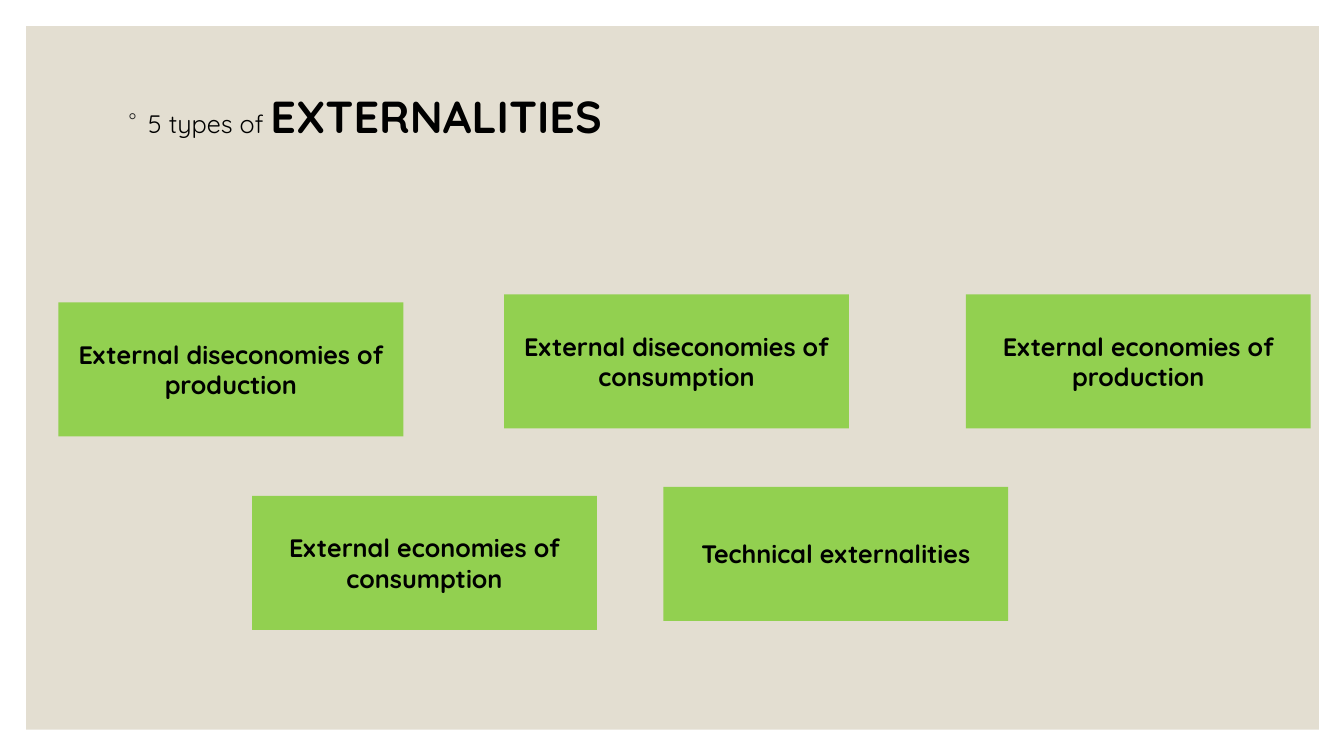
"""Builds a slide that names the five types of externalities."""
from lxml import etree
from pptx import Presentation
from pptx import util as u
from pptx.dml import color
from pptx.enum import shapes, text
from pptx.oxml import ns

FONT = "Quicksand"
BLACK, BULLET, PANEL, GREEN = "000000", "262626", "E3DED1", "92D050"
CARD_WIDTH, CARD_HEIGHT = 3.42, 1.33
CARDS = [
    ("External diseconomies of production", 0.58, 3),
    ("Technical externalities", 6.58, 4.83),
    ("External economies of consumption", 2.5, 4.92),
    ("External diseconomies of consumption", 5, 2.92),
    ("External economies of production", 9.58, 2.92),
]


def rgb(value):
    """Return the colour for a hex string."""
    return color.RGBColor.from_string(value)


def set_format(target, values):
    """Set each attribute named in values on target."""
    for name, value in values.items():
        setattr(target, name, value)


def place(shape, left, top, width, height):
    """Move and size a shape in inches."""
    edges = dict(left=left, top=top, width=width, height=height)
    set_format(shape, {name: u.Inches(edge) for name, edge in edges.items()})


def add_span(para, words, size, bold):
    """Add formatted words to a paragraph."""
    span = para.add_run()
    span.text = words
    set_format(span.font, {"name": FONT, "size": u.Pt(size), "bold": bold})
    span.font.color.rgb = rgb(BLACK)


def add_box(page, fill, left, top, width, height):
    """Add a plain filled rectangle."""
    box = page.shapes.add_shape(shapes.MSO_SHAPE.RECTANGLE, 0, 0, 0, 0)
    place(box, left, top, width, height)
    box.shadow.inherit = False
    box.fill.solid()
    box.fill.fore_color.rgb = rgb(fill)
    box.line.fill.background()
    return box


def add_card(page, words, left, top):
    """Add a green card with centred bold words."""
    box = add_box(page, GREEN, left, top, CARD_WIDTH, CARD_HEIGHT)
    set_format(box.text_frame, {"word_wrap": True,
                                "vertical_anchor": text.MSO_ANCHOR.MIDDLE})
    para = box.text_frame.paragraphs[0]
    para.alignment = text.PP_ALIGN.CENTER
    add_span(para, words, 18, True)


def add_bullet(para, sign, indent):
    """Give a paragraph a coloured bullet with a hanging indent."""
    props = para._p.get_or_add_pPr()
    props.set("marL", str(u.Inches(indent)))
    props.set("indent", str(-u.Inches(indent)))
    tint = etree.SubElement(props, ns.qn("a:buClr"))
    etree.SubElement(tint, ns.qn("a:srgbClr"), val=BULLET)
    etree.SubElement(props, ns.qn("a:buChar"), char=sign)


def fill_heading(page):
    """Format the body placeholder as the heading line above the panel."""
    body = page.placeholders[1]
    page.shapes._spTree.append(body._element)
    place(body, 1.17, 0.83, 7.17, 1.17)
    set_format(body.text_frame, {"word_wrap": True,
                                 "vertical_anchor": text.MSO_ANCHOR.TOP})
    para = body.text_frame.paragraphs[0]
    para.space_before = u.Pt(9)
    add_bullet(para, "◦", 0.2)
    add_span(para, "5 types of ", 18, False)
    add_span(para, "EXTERNALITIES", 32, True)


def main():
    """Build and save the deck."""
    deck = Presentation()
    set_format(deck, {"slide_width": u.Inches(13.33),
                      "slide_height": u.Inches(7.5)})
    page = deck.slides.add_slide(deck.slide_layouts[1])
    title = page.shapes.title._element
    title.getparent().remove(title)
    add_box(page, PANEL, 0.26, 0.26, 12.82, 6.98)
    fill_heading(page)
    for words, left, top in CARDS:
        add_card(page, words, left, top)
    deck.save("out.pptx")


if __name__ == "__main__":
    main()
